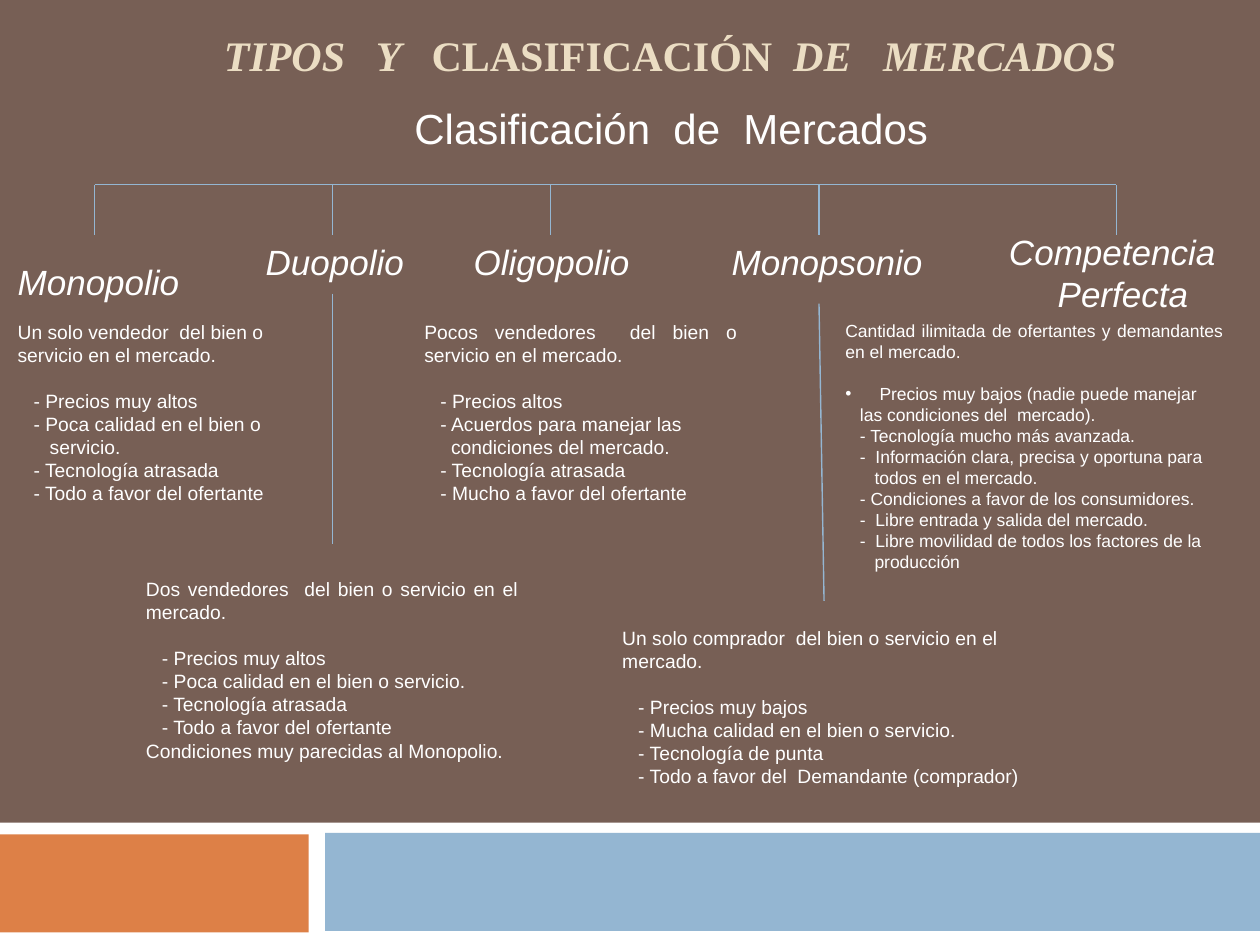
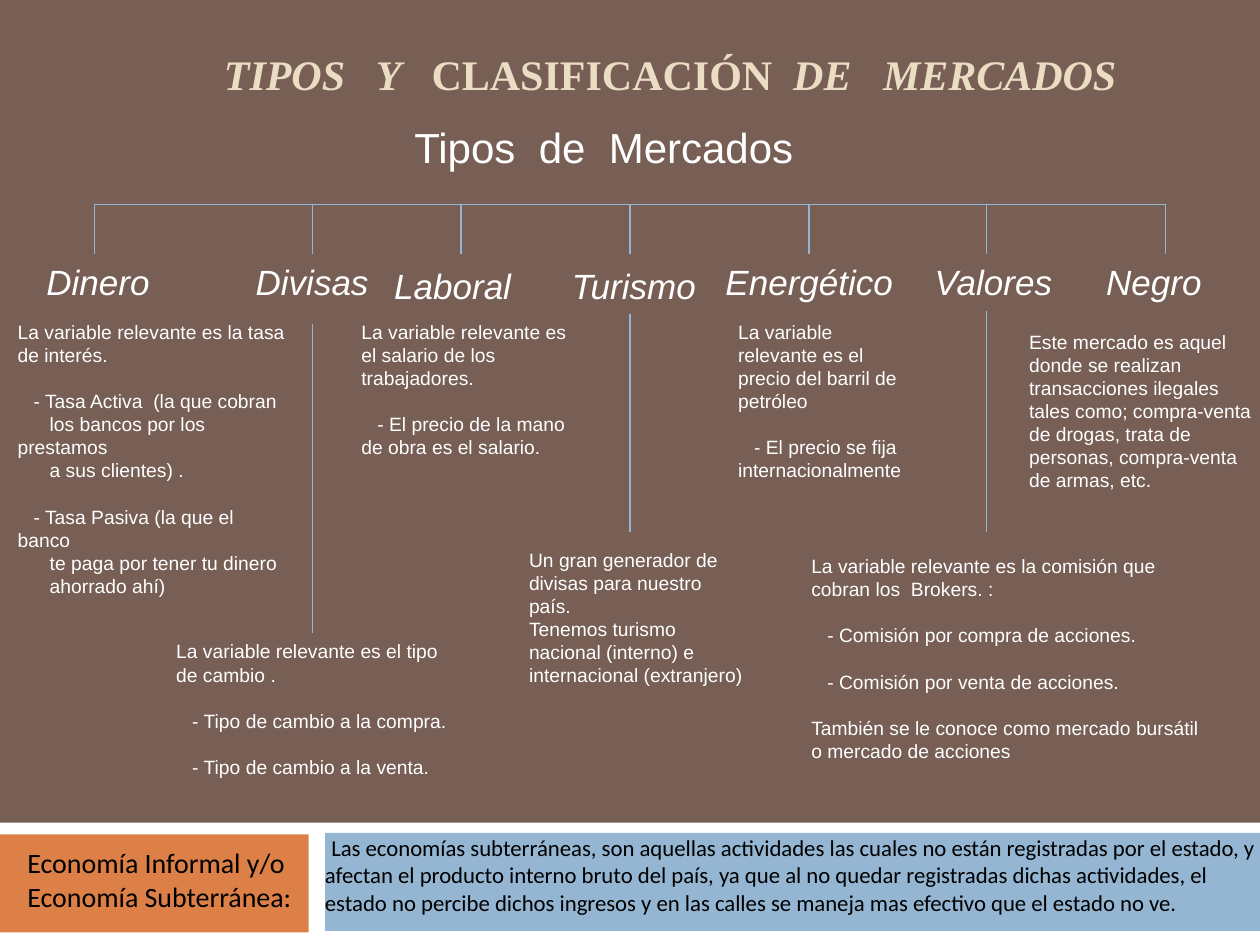
from pptx import Presentation
from pptx.dml.color import RGBColor
from pptx.enum.shapes import MSO_CONNECTOR, MSO_SHAPE
from pptx.enum.text import MSO_ANCHOR, PP_ALIGN
from pptx.oxml.ns import qn
from pptx.util import Pt
from lxml.etree import SubElement

BROWN = RGBColor(0x77, 0x5F, 0x55)
ORANGE = RGBColor(0xDD, 0x80, 0x47)
BLUE = RGBColor(0x94, 0xB6, 0xD2)
CREAM = RGBColor(0xEB, 0xDD, 0xC3)
WHITE = RGBColor(0xFF, 0xFF, 0xFF)
BLACK = RGBColor(0, 0, 0)

WIDE, HIGH = 720, 540
DROP = 28.5          # length of the short lines below the trunk
LEAD = 1.2           # line height as a share of the type size
SPACE = 0.278        # width of one indent step as a share of the type size
GAP = None           # an empty line before the next paragraph
DOT = "•"
LEFT, JUST = PP_ALIGN.LEFT, PP_ALIGN.JUSTIFY

TITLE = [("TIPOS   Y   ", True), ("CLASIFICACIÓN", False),
         ("  DE   MERCADOS", True)]
BANDS = [(0, 470, WIDE, 70, WHITE), (-0.5, 476.8, 177, 56, ORANGE),
         (185.8, 476, 534.2, 56, BLUE)]

# Paragraphs are plain strings, or pairs of (indent steps, text).
# Heads: left, top, width, paragraphs.
# Notes: left, top, width, height, size, alignment, paragraphs.
CLASSES = {
    "top": 15,
    "sub": ("Clasificación  de  Mercados", 311),
    "drops": [54, 190.1, 314.6, 468, 638],
    "tails": [(190.1, 167.8, 190.1, 311), (468, 173.5, 470.9, 343.4)],
    "heads": [
        (3, 145.5, 108, ["Monopolio"]),
        (144.7, 134, 94.5, ["Duopolio"]),
        (263.5, 134, 104.5, ["Oligopolio"]),
        (411, 134, 124.5, ["Monopsonio"]),
        (569.5, 128, 139, ["Competencia", (5, "Perfecta")]),
    ],
    "notes": [
        (3, 179.3, 158.4, 114, 11, LEFT, [
            "Un solo vendedor  del bien o servicio en el mercado.", GAP,
            (3, "- Precios muy altos"),
            (3, "- Poca calidad en el bien o"),
            (6, "servicio."),
            (3, "- Tecnología atrasada"),
            (3, "- Todo a favor del ofertante")]),
        (76.3, 326.2, 227, 114, 11, JUST, [
            "Dos vendedores  del bien o servicio en el mercado.", GAP,
            (3, "- Precios muy altos"),
            (3, "- Poca calidad en el bien o servicio."),
            (3, "- Tecnología atrasada"),
            (3, "- Todo a favor del ofertante"),
            "Condiciones muy parecidas al Monopolio."]),
        (235.4, 179.3, 193, 114, 11, JUST, [
            "Pocos vendedores  del bien o servicio en el mercado.", GAP,
            (3, "- Precios altos"),
            (3, "- Acuerdos para manejar las"),
            (5, "condiciones del mercado."),
            (3, "- Tecnología atrasada"),
            (3, "- Mucho a favor del ofertante")]),
        (348.5, 354.2, 244, 114, 11, LEFT, [
            "Un solo comprador  del bien o servicio en el mercado.", GAP,
            (3, "- Precios muy bajos"),
            (3, "- Mucha calidad en el bien o servicio."),
            (3, "- Tecnología de punta"),
            (3, "- Todo a favor del  Demandante (comprador)")]),
        (476, 179.3, 229.7, 152.6, 10, JUST, [
            "Cantidad ilimitada de ofertantes y demandantes en el mercado.",
            GAP,
            (DOT, "Precios muy bajos (nadie puede manejar"),
            (3, "las condiciones del  mercado)."),
            (3, "- Tecnología mucho más avanzada."),
            (3, "-  Información clara, precisa y oportuna para"),
            (6, "todos en el mercado."),
            (3, "- Condiciones a favor de los consumidores."),
            (3, "-  Libre entrada y salida del mercado."),
            (3, "-  Libre movilidad de todos los factores de la"),
            (6, "producción")]),
    ],
}

TYPES = {
    "top": 26.2,
    "sub": ("Tipos  de  Mercados", 233.3),
    "drops": [54, 178.6, 263.5, 360, 462.2, 563.8, 666],
    "tails": [(178.6, 185, 178.6, 362), (360, 179.3, 360, 303.8),
              (563.8, 177.8, 563.8, 303.8)],
    "heads": [
        (19.4, 145.5, 74, ["Dinero"]),
        (139, 145.5, 80, ["Divisas"]),
        (218.2, 147.6, 88, ["Laboral"]),
        (319.7, 147.6, 85.7, ["Turismo"]),
        (407.5, 145.5, 111, ["Energético"]),
        (527, 145.5, 82, ["Valores"]),
        (625, 145.5, 70, ["Negro"]),
    ],
    "notes": [
        (3, 179.3, 167.8, 180.7, 11, LEFT, [
            "La variable relevante es la tasa de interés.", GAP,
            (3, "- Tasa Activa  (la que cobran"),
            (6, "los bancos por los prestamos"),
            (6, "a sus clientes) ."), GAP,
            (3, "- Tasa Pasiva (la que el banco"),
            (6, "te paga por tener tu dinero"),
            (6, "ahorrado ahí)")]),
        (93.6, 362, 170, 101, 11, LEFT, [
            "La variable relevante es el tipo", "de cambio .", GAP,
            (3, "- Tipo de cambio a la compra."), GAP,
            (3, "- Tipo de cambio a la venta.")]),
        (199.4, 179.3, 138.2, 101, 11, LEFT, [
            "La variable relevante es el salario de los trabajadores.", GAP,
            (3, "- El precio de la mano de obra es el salario.")]),
        (295.2, 309.6, 138.2, 101, 11, LEFT, [
            "Un gran generador de divisas para nuestro país.",
            "Tenemos turismo nacional (interno) e "
            "internacional (extranjero)"]),
        (414.7, 179.3, 116, 114, 11, LEFT, [
            "La variable relevante es el precio del barril de petróleo", GAP,
            (3, "- El precio se fija internacionalmente")]),
        (456.5, 313.2, 238.3, 140.4, 11, LEFT, [
            "La variable relevante es la comisión que cobran los  Brokers. :",
            GAP,
            (3, "- Comisión por compra de acciones."), GAP,
            (3, "- Comisión por venta de acciones."), GAP,
            "También se le conoce como mercado bursátil "
            "o mercado de acciones"]),
        (581, 185, 141.8, 101, 11, LEFT, [
            "Este mercado es aquel donde se realizan transacciones ilegales "
            "tales como; compra-venta de drogas, trata de personas, "
            "compra-venta de armas, etc."]),
    ],
}

INFORMAL = "Economía Informal y/o Economía Subterránea:"
HIDDEN = ("Las economías subterráneas, son aquellas actividades las cuales no "
          "están registradas por el estado, y afectan el producto interno "
          "bruto del país, ya que al no quedar registradas dichas "
          "actividades, el estado no percibe dichos ingresos y en las calles "
          "se maneja mas efectivo que el estado no ve.")


def style(para, size, color, face="Arial", bold=None, slant=None):
    font = para.font
    font.name, font.size, font.bold, font.italic = face, Pt(size), bold, slant
    font.color.rgb = color


def frame(slide, left, top, width, height, wrap=True, anchor=MSO_ANCHOR.TOP):
    """Add a text box and return its text frame."""
    box = slide.shapes.add_textbox(Pt(left), Pt(top), Pt(width), Pt(height))
    text = box.text_frame
    text.word_wrap, text.vertical_anchor = wrap, anchor
    return text


def indent(para, step, size):
    """Indent the first line by steps, or hang it on a bullet."""
    props = para._p.get_or_add_pPr()
    if step == DOT:
        props.set("marL", str(Pt(19.5)))
        props.set("indent", str(Pt(-19.5)))
        SubElement(props, qn("a:buFont")).set("typeface", "Arial")
        SubElement(props, qn("a:buChar")).set("char", DOT)
    elif step:
        props.set("indent", str(Pt(round(step * SPACE * size, 2))))


def write(text, items, size, color=WHITE, align=LEFT, lead=LEAD, **look):
    """Fill a text frame; a GAP becomes space before the next paragraph."""
    gap, first = False, True
    for item in items:
        if item is GAP:
            gap = True
            continue
        step, words = (0, item) if isinstance(item, str) else item
        para = text.paragraphs[0] if first else text.add_paragraph()
        para.text = words
        indent(para, step, size)
        para.alignment = align
        para.line_spacing = Pt(round(lead * size, 2))
        para.space_before = Pt(lead * size if gap else 0)
        style(para, size, color, **look)
        gap, first = False, False


def rule(slide, *ends):
    line = slide.shapes.add_connector(MSO_CONNECTOR.STRAIGHT, *map(Pt, ends))
    line.line.color.rgb, line.line.width = BLUE, Pt(0.79)
    SubElement(line._element.spPr, qn("a:effectLst"))


def base(deck):
    """Add a slide with the brown ground and the bands at its foot."""
    slide = deck.slides.add_slide(deck.slide_layouts[6])
    slide.background.fill.solid()
    slide.background.fill.fore_color.rgb = BROWN
    for *place, color in BANDS:
        band = slide.shapes.add_shape(MSO_SHAPE.RECTANGLE, *map(Pt, place))
        band.shadow.inherit = False
        band.fill.solid()
        band.fill.fore_color.rgb = color
        band.line.fill.background()
    return slide


def chart(deck, data):
    """Build one slide: title, tree of lines, headings and notes."""
    slide, top = base(deck), data["top"]
    para = frame(slide, 105, top, 556, 34,
                 anchor=MSO_ANCHOR.BOTTOM).paragraphs[0]
    para.alignment = PP_ALIGN.CENTER
    for words, slant in TITLE:
        run = para.add_run()
        run.text, run.font.italic = words, slant
    style(para, 24, CREAM, "Times New Roman", bold=True)

    words, width = data["sub"]
    write(frame(slide, 229.7, top + 40, width, 36, wrap=False), [words], 24)

    trunk, drops = top + 90.6, data["drops"]
    rule(slide, drops[0], trunk, drops[-1], trunk)
    for x in drops:
        rule(slide, x, trunk, x, trunk + DROP)
    for tail in data["tails"]:
        rule(slide, *tail)

    for left, y, width, items in data["heads"]:
        text = frame(slide, left, y, width, 7.2 + 24 * len(items), wrap=False)
        write(text, items, 20, slant=True)
    for *place, size, align, items in data["notes"]:
        write(frame(slide, *place), items, size, align=align)
    return slide


def main():
    deck = Presentation()
    deck.slide_width, deck.slide_height = Pt(WIDE), Pt(HIGH)
    chart(deck, CLASSES)
    slide = chart(deck, TYPES)
    mid = MSO_ANCHOR.MIDDLE
    write(frame(slide, 8.6, 473.8, 170, 57, anchor=mid), [INFORMAL], 16,
          BLACK, face="Calibri")
    text = frame(slide, 178.6, 468.7, 545.8, 62.6, anchor=mid)
    text.margin_right = 0
    write(text, [(1, HIDDEN)], 13, BLACK, lead=1.19, face="Calibri")
    deck.save("out.pptx")


if __name__ == "__main__":
    main()
